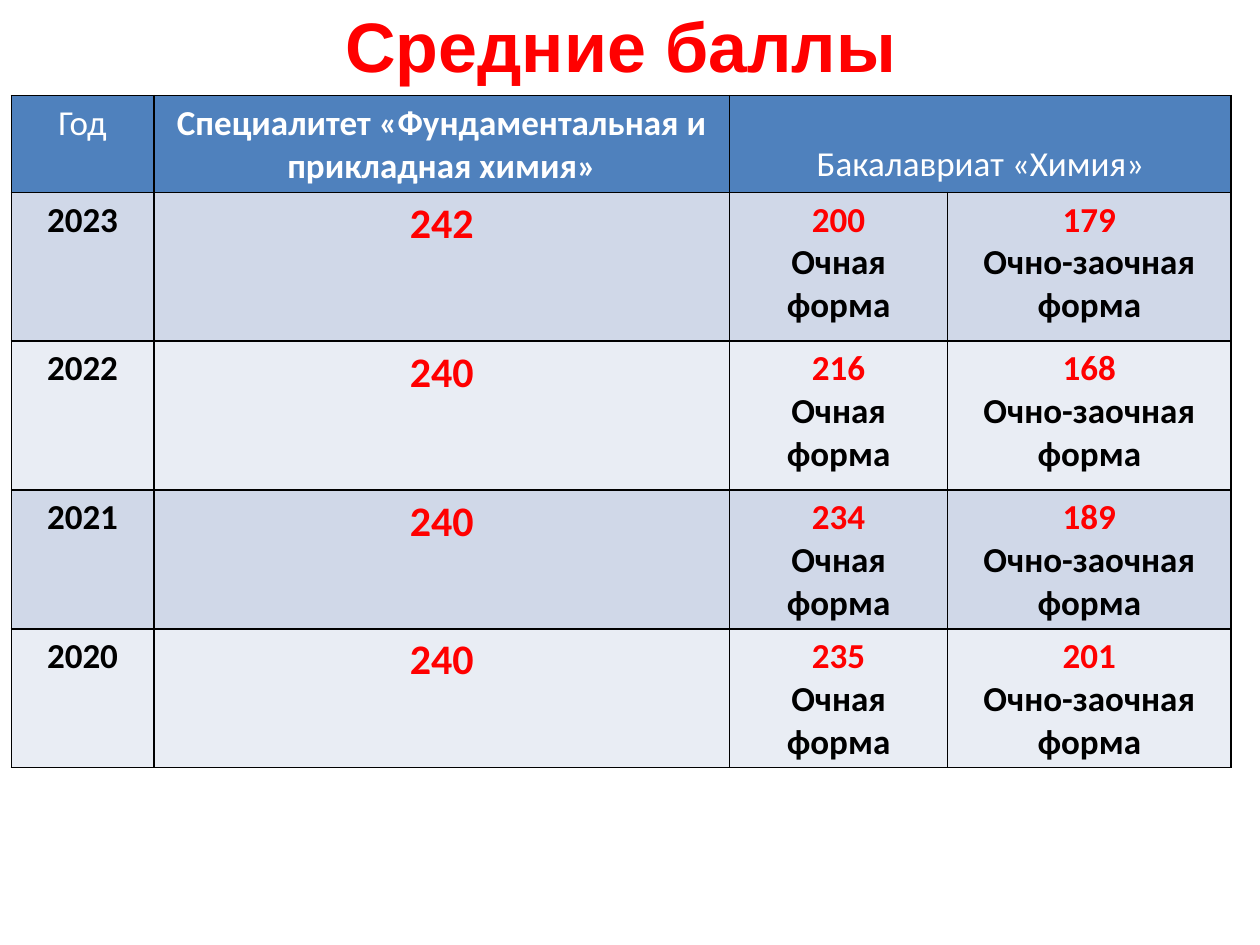
from lxml.etree import SubElement
from pptx import Presentation
from pptx.dml.color import RGBColor
from pptx.enum.text import MSO_ANCHOR, MSO_AUTO_SIZE, PP_ALIGN
from pptx.oxml.ns import qn
from pptx.util import Cm, Pt

TITLE = "Средние баллы"
HEADINGS = ["Год", "Специалитет «Фундаментальная и прикладная химия»", "Бакалавриат «Химия»"]
FORMS = ["Очная форма", "Очно-заочная форма"]
# year, specialist score, bachelor scores in the order of FORMS
SCORES = [
    ("2023", "242", ("200", "179")),
    ("2022", "240", ("216", "168")),
    ("2021", "240", ("234", "189")),
    ("2020", "240", ("235", "201")),
]
COLUMN_WIDTHS = [2.87, 11.61, 4.39, 5.72]
ROW_HEIGHTS = [1.8, 3, 3, 2.34, 2.39]

THEME = {
    "title_font": "Arial", "table_font": "Calibri",
    "title_size": Pt(40), "score_size": Pt(24), "text_size": Pt(20),
    "score": "FF0000", "text": "000000", "heading": "FFFFFF",
    "header_fill": "4F81BD", "bands": ["D0D8E8", "E9EDF4"],
    "border": "000000", "border_width": Pt(1),
}


def style(paragraph, font_name, size, color, bold):
    paragraph.alignment = PP_ALIGN.CENTER
    font = paragraph.font
    font.name, font.size, font.bold = font_name, size, bold
    font.color.rgb = RGBColor.from_string(color)


def add_borders(cell):
    properties = cell._tc.get_or_add_tcPr()
    for side in ("lnL", "lnR", "lnT", "lnB"):
        line = SubElement(properties, qn(f"a:{side}"), w=str(THEME["border_width"]))
        SubElement(SubElement(line, qn("a:solidFill")), qn("a:srgbClr"), val=THEME["border"])


def fill_cell(cell, fill, lines):
    """Write (text, size, color, bold) lines into a bordered cell."""
    add_borders(cell)
    cell.fill.solid()
    cell.fill.fore_color.rgb = RGBColor.from_string(fill)
    cell.text = "\n".join(line[0] for line in lines)
    for paragraph, (_, size, color, bold) in zip(cell.text_frame.paragraphs, lines):
        style(paragraph, THEME["table_font"], size, color, bold)


def add_title(slide):
    title = slide.shapes.title
    title.left, title.top, title.width, title.height = Cm(6.65), Cm(-0.08), Cm(11.73), Cm(1.96)
    frame = title.text_frame
    frame.text = TITLE
    frame.word_wrap = False
    frame.auto_size = MSO_AUTO_SIZE.SHAPE_TO_FIT_TEXT
    style(frame.paragraphs[0], THEME["title_font"], THEME["title_size"], THEME["score"], True)


def add_scores(slide):
    table = slide.shapes.add_table(
        len(ROW_HEIGHTS), len(COLUMN_WIDTHS), Cm(0.23), Cm(1.93),
        Cm(sum(COLUMN_WIDTHS)), Cm(sum(ROW_HEIGHTS))).table
    for column, width in zip(table.columns, COLUMN_WIDTHS):
        column.width = Cm(width)
    for row, height in zip(table.rows, ROW_HEIGHTS):
        row.height = Cm(height)

    size = THEME["text_size"]
    bachelor = table.cell(0, 2)
    bachelor.merge(table.cell(0, 3))
    add_borders(table.cell(0, 3))
    for index, heading in enumerate(HEADINGS):
        fill_cell(table.cell(0, index), THEME["header_fill"],
                  [(heading, size, THEME["heading"], index == 1)])
    bachelor.vertical_anchor = MSO_ANCHOR.BOTTOM

    for index, (year, specialist, bachelors) in enumerate(SCORES):
        contents = [
            [(year, size, THEME["text"], True)],
            [(specialist, THEME["score_size"], THEME["score"], True)],
        ] + [
            [(score, size, THEME["score"], True), (form, size, THEME["text"], True)]
            for score, form in zip(bachelors, FORMS)
        ]
        for cell, lines in zip(table.rows[index + 1].cells, contents):
            fill_cell(cell, THEME["bands"][index % 2], lines)


def main():
    presentation = Presentation()
    presentation.slide_width, presentation.slide_height = Cm(25.4), Cm(19.05)
    slide = presentation.slides.add_slide(presentation.slide_layouts.get_by_name("Title Only"))
    add_scores(slide)
    add_title(slide)
    presentation.save("out.pptx")


if __name__ == "__main__":
    main()
